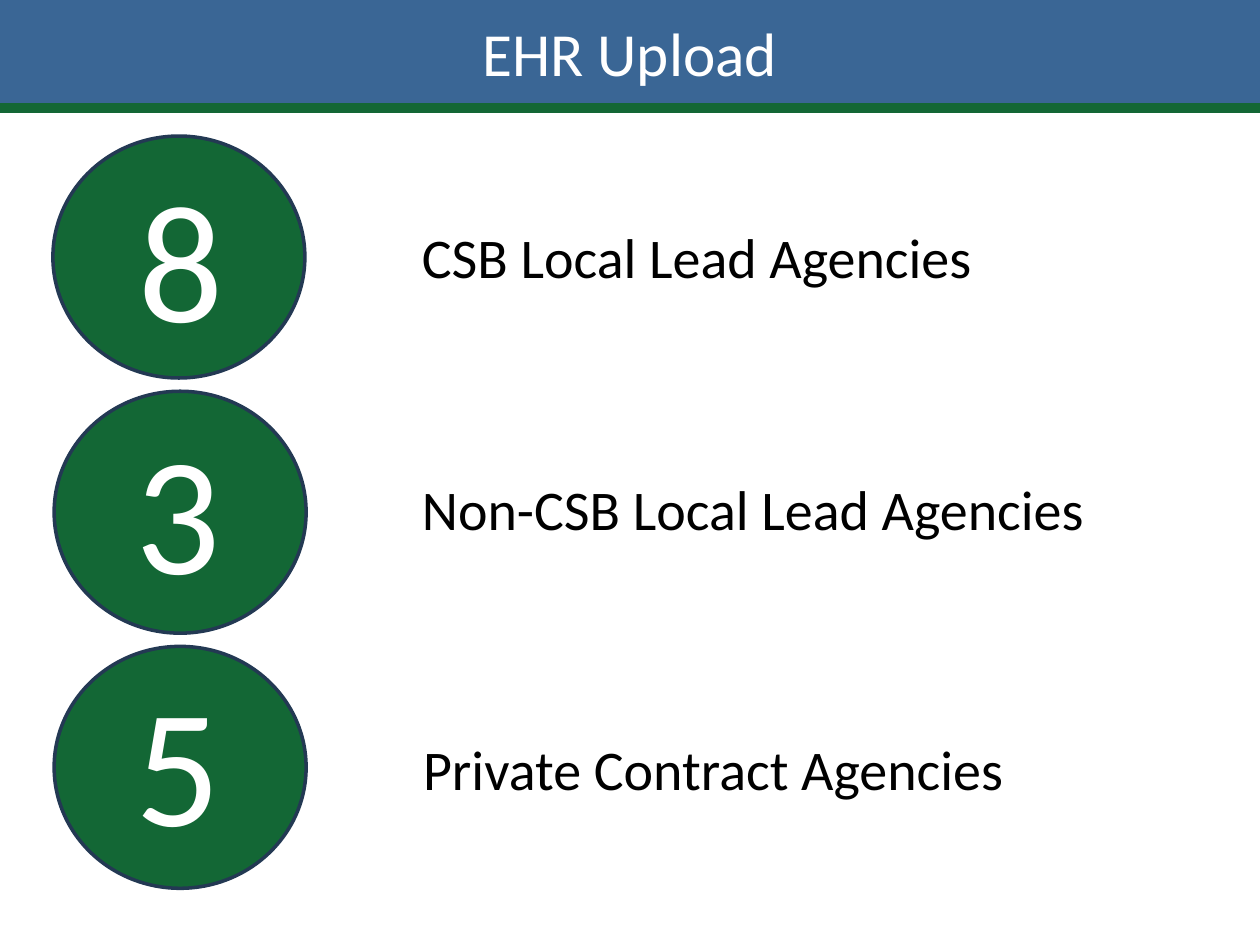
from pptx import Presentation
from pptx.dml.color import RGBColor
from pptx.enum.shapes import MSO_SHAPE
from pptx.enum.text import MSO_ANCHOR, MSO_AUTO_SIZE, PP_ALIGN
from pptx.util import Inches, Pt

HEADING = "EHR Upload"
AGENCIES = [
    {"count": "8", "label": "CSB Local Lead Agencies",
     "circle_left": 0.42, "count_left": 0.77, "label_at": (3.25, 1.72, 5, 0.64)},
    {"count": "3", "label": "Non-CSB Local Lead Agencies",
     "circle_left": 0.43, "count_left": 0.75, "label_at": (3.25, 3.72, 5.75, 0.64)},
    {"count": "5", "label": "Private Contract Agencies",
     "circle_left": 0.43, "count_left": 0.75, "label_at": (3.26, 5.78, 5, 0.64)},
]
HEADER_AT = (0, 0, 10, 0.83)
RULE_AT = (0, 0.83, 10, 0.05)
CIRCLE_TOP, CIRCLE_STEP = 1.08, 2.025
COUNT_TOP, COUNT_STEP = 1.18, 2

THEME = {
    "blue": RGBColor.from_string("3A6695"),
    "green": RGBColor.from_string("136735"),
    "outline": RGBColor.from_string("233953"),
    "white": RGBColor.from_string("FFFFFF"),
    "black": RGBColor.from_string("000000"),
    "font": "Calibri",
    "heading": Pt(35),
    "count": Pt(96),
    "label": Pt(32),
    "line": Pt(2),
}


def inches(box):
    return [Inches(length) for length in box]


def add_filled(slide, preset, box, fill, line):
    figure = slide.shapes.add_shape(preset, *inches(box))
    figure.shadow.inherit = False
    figure.fill.solid()
    figure.fill.fore_color.rgb = THEME[fill]
    figure.line.color.rgb = THEME[line]
    figure.line.width = THEME["line"]


def write(holder, words, size, colour, align, frame_format):
    frame = holder.text_frame
    for name, value in frame_format.items():
        setattr(frame, name, value)
    paragraph = frame.paragraphs[0]
    paragraph.alignment = align
    run = paragraph.add_run()
    run.text = words
    for name, value in {"name": THEME["font"], "size": THEME[size]}.items():
        setattr(run.font, name, value)
    run.font.color.rgb = THEME[colour]


def add_words(slide, box, words, size, colour, align):
    write(slide.shapes.add_textbox(*inches(box)), words, size, colour, align,
          {"word_wrap": True, "auto_size": MSO_AUTO_SIZE.SHAPE_TO_FIT_TEXT})


def add_header(slide):
    add_filled(slide, MSO_SHAPE.RECTANGLE, HEADER_AT, "blue", "blue")
    add_filled(slide, MSO_SHAPE.RECTANGLE, RULE_AT, "green", "green")
    heading = slide.shapes.title
    heading.left, heading.top, heading.width, heading.height = inches(HEADER_AT)
    write(heading, HEADING, "heading", "white", PP_ALIGN.CENTER,
          {"word_wrap": True, "auto_size": MSO_AUTO_SIZE.NONE,
           "vertical_anchor": MSO_ANCHOR.MIDDLE})
    heading.element.getparent().append(heading.element)


def main():
    deck = Presentation()
    deck.slide_width, deck.slide_height = Inches(10), Inches(7.5)
    slide = deck.slides.add_slide(deck.slide_layouts[5])
    add_header(slide)
    for row, agency in enumerate(AGENCIES):
        circle_at = (agency["circle_left"], CIRCLE_TOP + row * CIRCLE_STEP, 2, 1.92)
        count_at = (agency["count_left"], COUNT_TOP + row * COUNT_STEP, 1.33, 1.72)
        add_filled(slide, MSO_SHAPE.OVAL, circle_at, "green", "outline")
        add_words(slide, count_at, agency["count"], "count", "white", PP_ALIGN.CENTER)
        add_words(slide, agency["label_at"], agency["label"], "label", "black",
                  PP_ALIGN.LEFT)
    deck.save("out.pptx")


if __name__ == "__main__":
    main()
